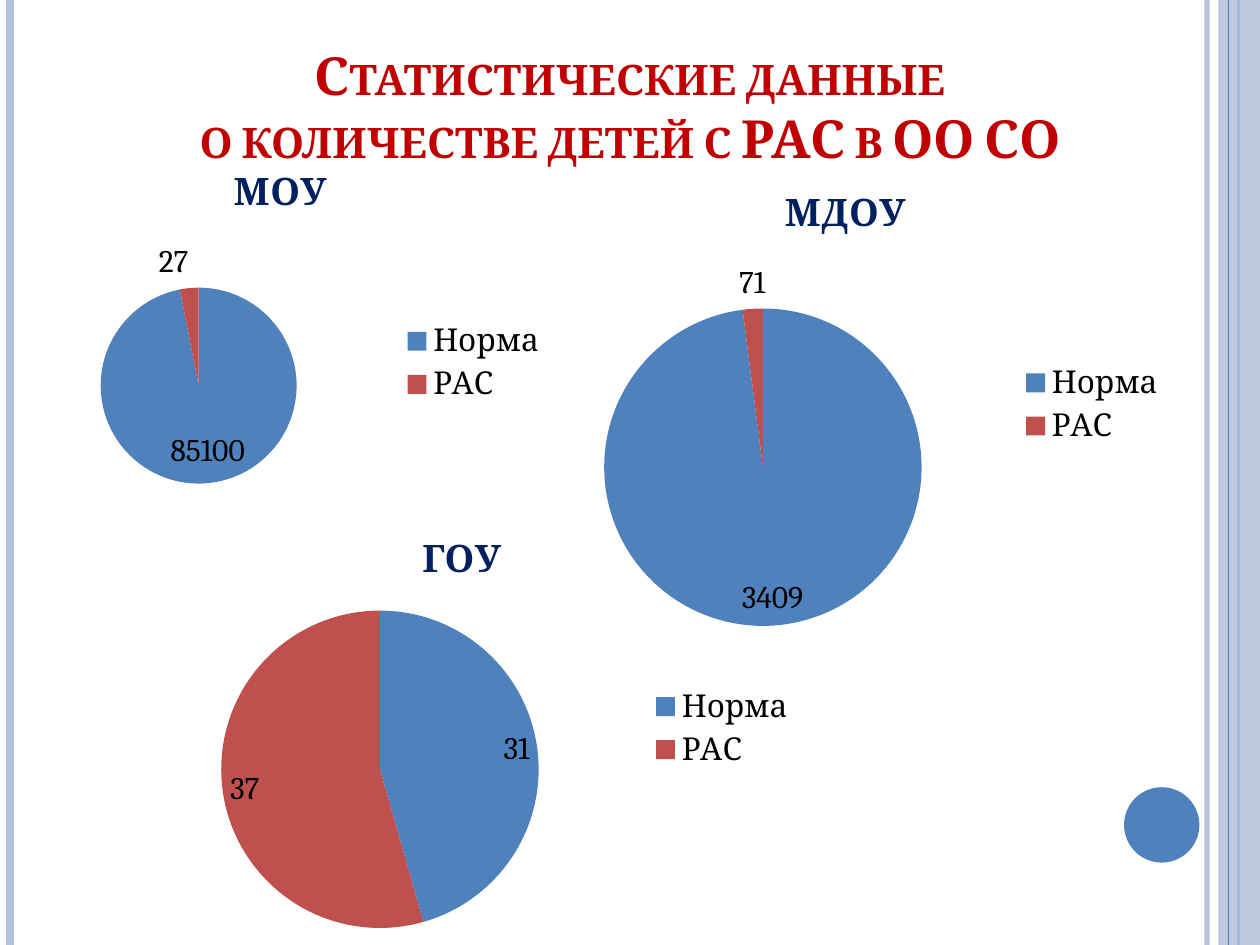
import pptx
import pptx.util
import pptx.oxml
import pptx.chart.data
import pptx.dml.color
import pptx.enum.chart
import pptx.enum.shapes
import pptx.enum.text
from pptx.oxml.ns import qn
from pptx.util import Cm, Pt

FONT = "Cambria"
BLUE, PALE, RED = "4F81BD", "B3C1DB", "C0504D"
WIDTH, HEIGHT = 25.4, 19.05


def colour(value):
    return pptx.dml.color.RGBColor.from_string(value)


def set_font(font, size, value, bold=False):
    formats = {"name": FONT, "size": Pt(size), "bold": bold}
    for name, setting in formats.items():
        setattr(font, name, setting)
    font.color.rgb = colour(value)


def set_alpha(fill_parent, percent):
    clr = next(fill_parent.iter(qn("a:srgbClr")))
    alpha = clr.makeelement(qn("a:alpha"), {"val": str(percent * 1000)})
    clr.append(alpha)


def add_rule(s, x, value, weight, alpha=None):
    line = s.shapes.add_connector(
        pptx.enum.shapes.MSO_CONNECTOR.STRAIGHT, Cm(x), 0, Cm(x), Cm(HEIGHT))
    line.line.color.rgb = colour(value)
    line.line.width = Pt(weight)
    sp_pr = line._element.spPr
    if alpha:
        set_alpha(sp_pr, alpha)
    sp_pr.append(sp_pr.makeelement(qn("a:effectLst"), {}))


def add_solid(s, kind, box, value, alpha=None):
    sp = s.shapes.add_shape(kind, *map(Cm, box))
    sp.shadow.inherit = False
    sp.fill.solid()
    sp.fill.fore_color.rgb = colour(value)
    sp.line.fill.background()
    if alpha:
        set_alpha(sp._element.spPr, alpha)


def add_frame(s, box):
    left, top, width, height = box
    right = left + width
    shapes = pptx.enum.shapes.MSO_SHAPE
    add_rule(s, right - 1.07, PALE, 3, 93)
    add_rule(s, left + 0.2, PALE, 4.5)
    add_rule(s, right - 0.43, BLUE, 1.5)
    add_solid(s, shapes.RECTANGLE, (right - 0.84, top, 0.84, height), PALE, 87)
    add_rule(s, right - 0.63, BLUE, 0.75)
    add_solid(s, shapes.OVAL,
              (right - 2.74, top + height - 3.18, 1.52, 1.52), BLUE)


def add_title(s, box):
    tf = s.shapes.add_textbox(*map(Cm, box)).text_frame
    tf.word_wrap = True
    tf.vertical_anchor = pptx.enum.text.MSO_ANCHOR.BOTTOM
    p = tf.paragraphs[0]
    p.text = "Статистические данные\vо количестве детей с РАС в ОО СО"
    p.alignment = pptx.enum.text.PP_ALIGN.CENTER
    for r in p.runs:
        set_font(r.font, 30, "C00000", True)
        r._r.get_or_add_rPr().set("cap", "small")


def place_pie(chart, box, pie):
    x, y, diameter = pie
    width, height = box[2:]
    area = chart._chartSpace.chart.plotArea
    for old in area.findall(qn("c:layout")):
        area.remove(old)
    layout = area.makeelement(qn("c:layout"), {})
    area.insert(0, layout)
    manual = pptx.oxml.ns and layout.makeelement(qn("c:manualLayout"), {})
    layout.append(manual)
    settings = {"layoutTarget": "inner", "xMode": "edge", "yMode": "edge",
                "x": x / width, "y": y / height,
                "w": diameter / width, "h": diameter / height}
    for name, value in settings.items():
        manual.append(manual.makeelement(qn("c:" + name), {"val": str(value)}))


def add_pie(s, box, name, values, pie, label=None):
    data = pptx.chart.data.CategoryChartData()
    data.categories = ["Норма", "РАС"]
    data.add_series(name, values)
    chart = s.shapes.add_chart(
        pptx.enum.chart.XL_CHART_TYPE.PIE, *map(Cm, box), data).chart
    set_font(chart.font, 18, "000000")
    chart.has_title = True
    tf = chart.chart_title.text_frame
    tf.text = name
    set_font(tf.paragraphs[0].runs[0].font, 21.6, "002060", True)
    chart.has_legend = True
    chart.legend.position = pptx.enum.chart.XL_LEGEND_POSITION.RIGHT
    chart.legend.include_in_layout = False
    plot = chart.plots[0]
    plot.vary_by_categories = True
    series = plot.series[0]
    for i, value in enumerate((BLUE, RED)):
        fill = series.points[i].format.fill
        fill.solid()
        fill.fore_color.rgb = colour(value)
    best_fit = pptx.enum.chart.XL_LABEL_POSITION.BEST_FIT
    labels = series.data_labels
    for key, setting in {"show_value": True, "show_percentage": False,
                         "position": best_fit}.items():
        setattr(labels, key, setting)
    set_font(labels.font, 18, "000000")
    if label:
        point_label = series.points[0].data_label
        point_label.text_frame.text = label
        set_font(point_label.text_frame.paragraphs[0].runs[0].font, 18, "000000")
        point_label.position = best_fit
    place_pie(chart, box, pie)


def main():
    prs = pptx.Presentation()
    prs.slide_width, prs.slide_height = Cm(WIDTH), Cm(HEIGHT)
    s = prs.slides.add_slide(prs.slide_layouts[6])
    add_frame(s, (0, 0, WIDTH, HEIGHT))
    add_title(s, (1.27, 0.74, 22.86, 2.79))
    add_pie(s, (0, 2.92, 11.3, 8.79), "МОУ", (851, 27), (2.03, 2.88, 3.95), "85100")
    add_pie(s, (10.31, 3.33, 13.46, 9.65), "МДОУ", (3409, 71), (1.87, 2.89, 6.4))
    add_pie(s, (2.31, 10.31, 14, 8.74), "ГОУ", (31, 37), (2.15, 2, 6.4))
    prs.save("out.pptx")


if __name__ == "__main__":
    main()
